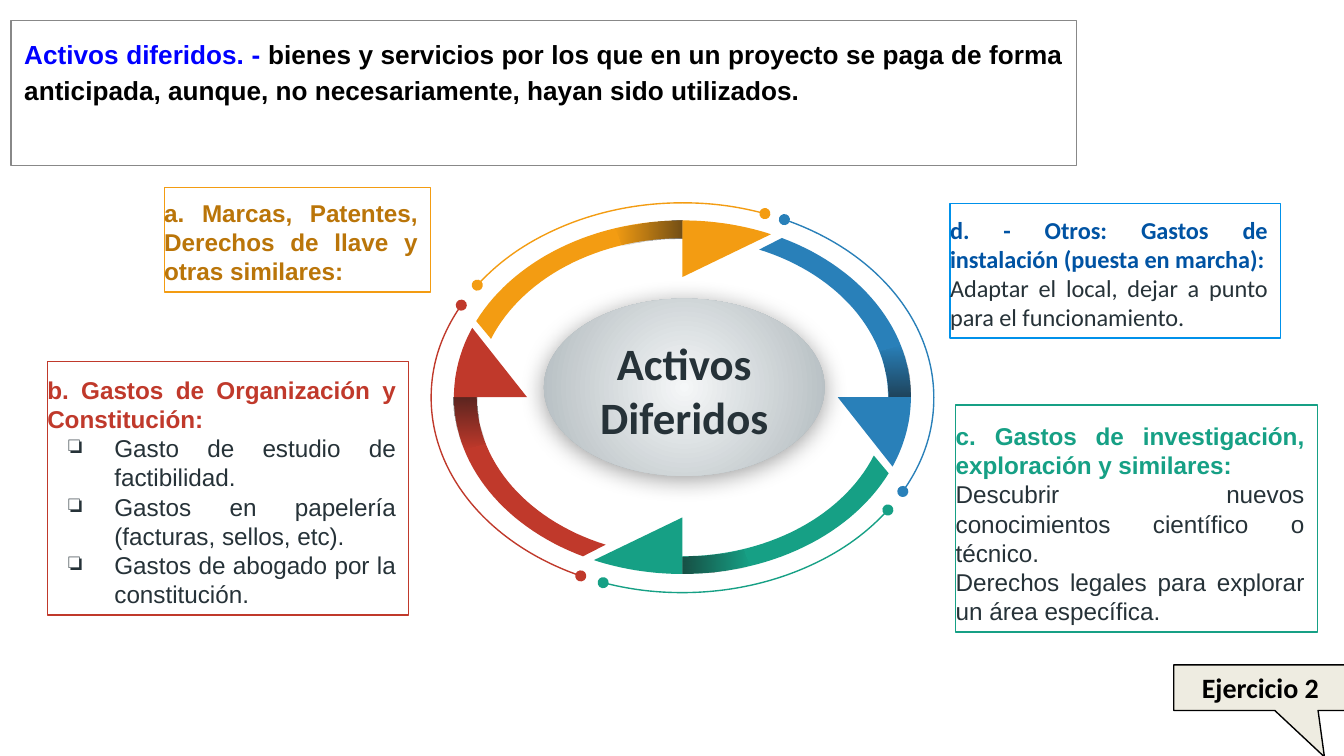
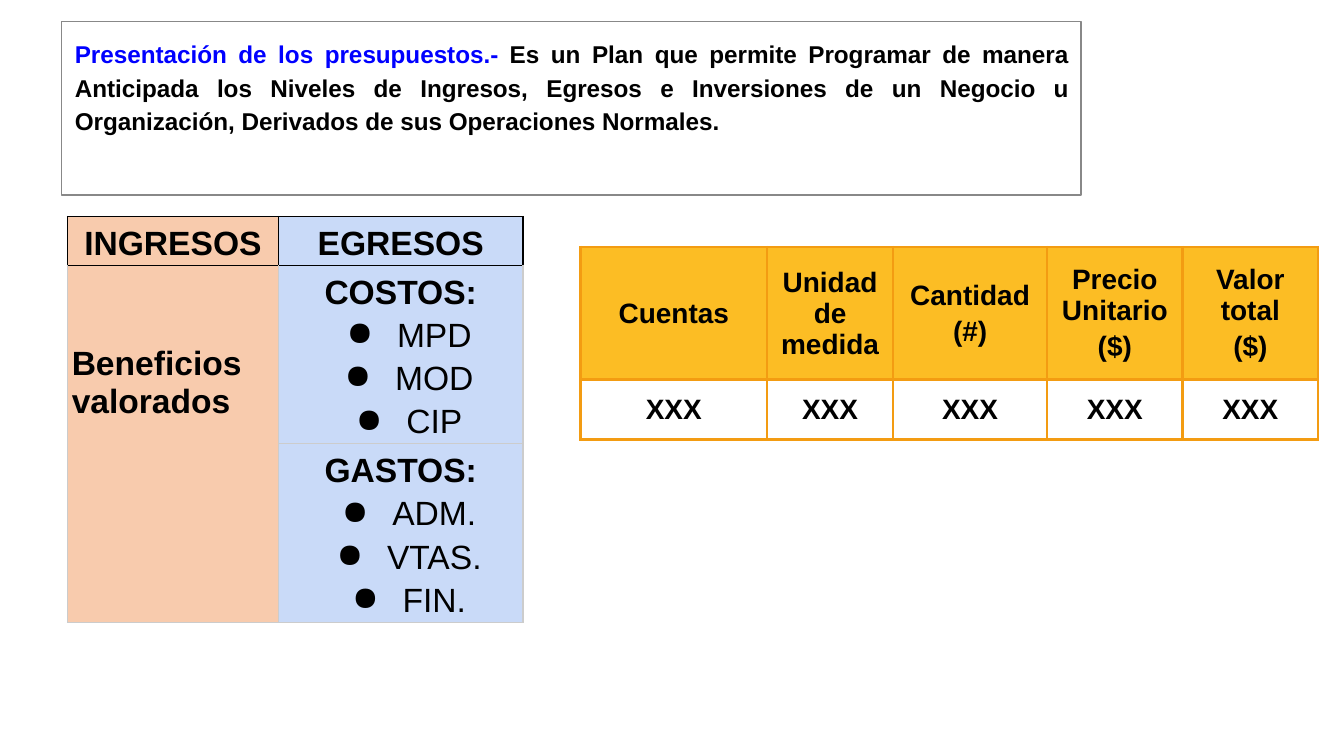
from dataclasses import dataclass
from math import cos, radians, sin
from typing import NamedTuple

from lxml.etree import SubElement
from pptx import Presentation
from pptx.dml.color import RGBColor
from pptx.enum.shapes import MSO_SHAPE
from pptx.enum.text import MSO_ANCHOR, PP_ALIGN
from pptx.oxml.ns import qn
from pptx.util import Pt

HUES = {
    "black": "000000", "white": "FFFFFF", "ink": "263238", "blue": "0000FF",
    "gray": "888888", "pale": "CCCCCC", "shade": "181818", "cream": "EEECE1",
    "gold": "F39C12", "bronze": "BA7509", "sea": "2980B9", "green": "16A085",
    "red": "C0392B", "sky": "0091EA", "navy": "0053A3", "light": "F5F7F8",
    "steel": "AFB8BC", "peach": "F8CBAD", "ice": "C9DAF8", "amber": "FCBD24",
}


class Run(NamedTuple):
    text: str
    hue: str = "black"
    size: float = 13
    bold: bool = False
    font: str = "Arial"


@dataclass
class Para:
    runs: list[Run]
    align: PP_ALIGN = PP_ALIGN.JUSTIFY
    line: float = 1.0
    after: float = 0
    mark: str = ""
    hang: float = 0


@dataclass
class Box:
    spot: tuple[float, float, float, float]
    edge: str
    paras: list[Para]
    kind: MSO_SHAPE = MSO_SHAPE.RECTANGLE
    fill: str = "white"
    pads: tuple[float, float, float, float] = (0, 3.6, 7.2, 3.6)
    hold: MSO_ANCHOR = MSO_ANCHOR.BOTTOM


@dataclass
class Cell:
    paras: list[Para]
    fill: str = ""
    edge: str = "gold"
    pads: tuple[float, float, float, float] = (7.2, 7.2, 7.2, 7.2)
    hold: MSO_ANCHOR = MSO_ANCHOR.MIDDLE


class Part(NamedTuple):
    """One quarter of the ring; angles run clockwise from the right."""
    hue: str
    outer: float
    inner: float
    stop: float
    tip: float
    arc: tuple[float, float]


# Shared helpers
def tone(name: str) -> RGBColor:
    return RGBColor.from_string(HUES[name])


def write(frame, paras: list[Para]) -> None:
    for i, item in enumerate(paras):
        para = frame.paragraphs[0] if i == 0 else frame.add_paragraph()
        para.alignment = item.align
        para.line_spacing = item.line
        para.space_before = Pt(0)
        para.space_after = Pt(item.after)
        if item.mark:
            props = para._p.get_or_add_pPr()
            props.set("marL", str(Pt(36)))
            props.set("indent", str(-Pt(item.hang)))
            tint = SubElement(props, qn("a:buClr"))
            SubElement(tint, qn("a:srgbClr"), val=HUES[item.runs[0].hue])
            SubElement(props, qn("a:buChar"), char=item.mark)
        for bit in item.runs:
            run = para.add_run()
            run.text = bit.text
            run.font.name = bit.font
            run.font.size = Pt(bit.size)
            run.font.bold = bit.bold
            run.font.color.rgb = tone(bit.hue)


def paint(shape, fill: str = "", edge: str = "") -> None:
    shape.shadow.inherit = False
    if fill:
        shape.fill.solid()
        shape.fill.fore_color.rgb = tone(fill)
    else:
        shape.fill.background()
    if edge:
        shape.line.color.rgb = tone(edge)
        shape.line.width = Pt(0.75)
    else:
        shape.line.fill.background()


def blend(shape, stops: list[tuple[str, int]], angle: float | None) -> None:
    """Gradient of (hue, opacity); a round one when there is no angle."""
    props = shape.element.spPr
    grad = props.makeelement(qn("a:gradFill"), {"rotWithShape": "1"})
    props.replace(props.find(qn("a:noFill")), grad)
    steps = SubElement(grad, qn("a:gsLst"))
    for i, (hue, alpha) in enumerate(stops):
        step = SubElement(steps, qn("a:gs"), pos=str(i * 100000))
        tint = SubElement(step, qn("a:srgbClr"), val=HUES[hue])
        SubElement(tint, qn("a:alpha"), val=str(alpha * 1000))
    if angle is None:
        way = SubElement(grad, qn("a:path"), path="circle")
        SubElement(way, qn("a:fillToRect"), {s: "50000" for s in "ltrb"})
    else:
        SubElement(grad, qn("a:lin"), ang=str(int(angle * 60000)), scaled="0")


def place(slide, box: Box):
    shape = slide.shapes.add_shape(box.kind, *map(Pt, box.spot))
    paint(shape, box.fill, box.edge)
    frame = shape.text_frame
    frame.word_wrap = True
    frame.vertical_anchor = box.hold
    (frame.margin_left, frame.margin_top,
     frame.margin_right, frame.margin_bottom) = map(Pt, box.pads)
    write(frame, box.paras)
    return shape


def head(slide, spot: tuple, size: float, term: str, text: str) -> None:
    """Framed definition at the top of each slide."""
    runs = [Run(term, "blue", size, True), Run(text, "black", size, True)]
    place(slide, Box(spot, "gray", [Para(runs, line=1.15, after=12)],
                     pads=(7.2,) * 4, hold=MSO_ANCHOR.TOP))


def grid(slide, left: float, top: float, cols: list[float],
         rows: list[float], cells: list[list[Cell]], wide: float,
         joins: tuple = ()) -> None:
    table = slide.shapes.add_table(
        len(rows), len(cols), Pt(left), Pt(top), Pt(sum(cols)), Pt(sum(rows))).table
    table.first_row = table.horz_banding = False
    for col, width in zip(table.columns, cols):
        col.width = Pt(width)
    for row, tall in zip(table.rows, rows):
        row.height = Pt(tall)
    for r, line in enumerate(cells):
        for c, item in enumerate(line):
            cell = table.cell(r, c)
            if item.fill:
                cell.fill.solid()
                cell.fill.fore_color.rgb = tone(item.fill)
            else:
                cell.fill.background()
            cell.vertical_anchor = item.hold
            (cell.margin_left, cell.margin_top,
             cell.margin_right, cell.margin_bottom) = map(Pt, item.pads)
            write(cell.text_frame, item.paras)
            props = cell._tc.get_or_add_tcPr()
            for i, side in enumerate("LRTB"):
                above = side == "T" and r > 0
                hue = cells[r - 1][c].edge if above else item.edge
                rule = props.makeelement(qn(f"a:ln{side}"), {"w": str(Pt(wide))})
                solid = SubElement(rule, qn("a:solidFill"))
                SubElement(solid, qn("a:srgbClr"), val=HUES[hue])
                props.insert(i, rule)
    for first, last in joins:
        table.cell(*first).merge(table.cell(*last))


# Ring of four arrows
MID = (365.6, 212.8)
OUTER = (122.4, 94.7)
INNER = (110.2, 85.2)
PARTS = [
    Part("gold", 205.5, 201.5, 270, 292.8, (208.75, 294.12)),
    Part("sea", 295.8, 291.9, 360, 383.1, (299.78, 23.05)),
    Part("green", 25.5, 201.5 - 180, 90, 112.8, (28.65, 113.2)),
    Part("red", 115.8, 111.9, 180, 203.1, (119.72, 202.71)),
]


def curve(radii: tuple, start: float, stop: float, count: int = 30) -> list:
    turns = [radians(start + (stop - start) * i / count) for i in range(count + 1)]
    return [(MID[0] + radii[0] * cos(t), MID[1] + radii[1] * sin(t)) for t in turns]


def trace(slide, dots: list, fill: str = ""):
    ends = [(Pt(x), Pt(y)) for x, y in dots]
    pen = slide.shapes.build_freeform(*ends[0])
    pen.add_line_segments(ends[1:], close=True)
    shape = pen.convert_to_shape()
    paint(shape, fill)
    return shape


def ring(slide) -> None:
    for part in PARTS:
        stop = part.stop
        trace(slide, curve(OUTER, part.outer, stop)
              + curve(INNER, stop, part.inner), part.hue)
        dusk = trace(slide, curve(OUTER, stop - 17, stop)
                     + curve(INNER, stop, stop - 17))
        blend(dusk, [("shade", 0), ("shade", 60)], (stop + 90) % 360)
        barb = curve((OUTER[0] * 0.68, OUTER[1] * 0.68), stop, stop, 1)[:1]
        trace(slide, curve(OUTER, stop, part.tip) + barb, part.hue)
    for part in PARTS:
        arc = slide.shapes.add_shape(
            MSO_SHAPE.ARC, Pt(231), Pt(108.7), Pt(269.3), Pt(208.8))
        paint(arc, edge=part.hue)
        for i, angle in enumerate(part.arc):
            arc.adjustments[i] = angle * 0.6
        for end in ("headEnd", "tailEnd"):
            SubElement(arc.line._get_or_add_ln(), qn(f"a:{end}"), type="oval")


# Slide 1: deferred assets
def assets(slide) -> None:
    ring(slide)

    def title(text: str, hue: str, font: str = "Arial") -> Para:
        return Para([Run(text, hue, bold=True, font=font)])

    def plain(text: str, mark: str = "", font: str = "Arial") -> Para:
        return Para([Run(text, "ink", font=font)], mark=mark, hang=24.5)

    notes = [
        Box((88, 100.3, 142.7, 56.2), "gold", [
            title("a. Marcas, Patentes, Derechos de llave y otras similares:", "bronze")]),
        Box((512, 217, 193.7, 121.6), "green", [
            title("c. Gastos de investigación, exploración y similares:", "green"),
            plain("Descubrir nuevos conocimientos científico o técnico."),
            plain("Derechos legales para explorar un área específica.")]),
        Box((25.3, 193.7, 193.7, 135.8), "red", [
            title("b. Gastos de Organización y Constitución:", "red"),
            plain("Gasto de estudio de factibilidad.", "❏"),
            plain("Gastos en papelería (facturas, sellos, etc).", "❏"),
            plain("Gastos de abogado por la constitución.", "❏")]),
        Box((509, 109.2, 177.1, 71.9), "sky", [
            title("d. - Otros: Gastos de instalación (puesta en marcha):", "navy", "Calibri"),
            plain("Adaptar el local, dejar a punto para el funcionamiento.", font="Calibri")]),
    ]
    for note in notes:
        place(slide, note)

    # Centre
    core = place(slide, Box(
        (291.4, 160, 150.4, 95), "",
        [Para([Run("Activos Diferidos", "ink", 24, True, "Calibri")], PP_ALIGN.CENTER)],
        MSO_SHAPE.OVAL, "", (7.2, 3.6, 7.2, 3.6)))
    blend(core, [("light", 100), ("steel", 100)], None)
    glow = SubElement(core.element.spPr.find(qn("a:effectLst")), qn("a:outerShdw"),
                      blurRad=str(Pt(13)), dist=str(Pt(2)), dir="5400000",
                      algn="ctr", rotWithShape="0")
    tint = SubElement(glow, qn("a:srgbClr"), val=HUES["black"])
    SubElement(tint, qn("a:alpha"), val="38000")

    head(slide, (5.9, 10.9, 570.8, 77.7), 14, "Activos diferidos. -",
         " bienes y servicios por los que en un proyecto se paga de forma "
         "anticipada, aunque, no necesariamente, hayan sido utilizados.")
    call = place(slide, Box(
        (628.8, 356.2, 92.8, 24.4), "black",
        [Para([Run("Ejercicio 2", "black", 15, True, "Calibri")], PP_ALIGN.CENTER)],
        MSO_SHAPE.RECTANGULAR_CALLOUT, "cream", (7.2,) * 4, MSO_ANCHOR.MIDDLE))
    call.adjustments[0], call.adjustments[1] = 0.37, 1.52


# Slide 2: budgets
def budgets(slide) -> None:
    head(slide, (33, 11.6, 546.2, 92.9), 13, "Presentación de los presupuestos.- ",
         "Es un Plan que permite Programar de manera Anticipada los Niveles de "
         "Ingresos, Egresos e Inversiones de un Negocio u Organización, "
         "Derivados de sus Operaciones Normales.")

    def line(text: str, size: float = 18, bold: bool = True,
             space: float = 1.15, mark: str = "") -> Para:
        return Para([Run(text, "black", size, bold)], PP_ALIGN.CENTER, space,
                    mark=mark, hang=27)

    # Income and expenses
    slim = (2.25, 1.5, 2.25, 1.5)

    def group(name: str, items: list[str]) -> Cell:
        dots = [line(item, bold=False, mark="●") for item in items]
        return Cell([line(name)] + dots, "ice", "pale", slim, MSO_ANCHOR.TOP)

    gains = Para([Run("Beneficios valorados", "black", 18, True)], PP_ALIGN.LEFT)
    grid(slide, 36.2, 116, [113, 131], [25.2, 93.6, 93.6], [
        [Cell([line("INGRESOS")], "peach", "black", slim, MSO_ANCHOR.BOTTOM),
         Cell([line("EGRESOS")], "ice", "black", slim, MSO_ANCHOR.BOTTOM)],
        [Cell([gains], "peach", "pale", (2.25, 43, 2.25, 1.5), MSO_ANCHOR.TOP),
         group("COSTOS:", ["MPD", "MOD", "CIP"])],
        [Cell([], "peach", "pale", slim),
         group("GASTOS:", ["ADM.", "VTAS.", "FIN."])],
    ], 0.75, (((1, 0), (2, 0)),))

    # Accounts
    names = [("Cuentas", ""), ("Unidad de medida", ""), ("Cantidad", "(#)"),
             ("Precio Unitario", "($)"), ("Valor total", "($)")]
    tops = [Cell([line(name, 15, space=1.0)] + ([line(unit, 15)] if unit else []), "amber")
            for name, unit in names]
    fills = [Cell([line("XXX", 15, space=1.0)]) for _ in names]
    grid(slide, 311, 132.4, [100, 67.5, 82.5, 72.6, 72.6], [71, 32.2],
         [tops, fills], 1.5)


def main() -> None:
    deck = Presentation()
    deck.slide_width, deck.slide_height = Pt(720), Pt(405)
    for draw in (assets, budgets):
        draw(deck.slides.add_slide(deck.slide_layouts[6]))
    deck.save("out.pptx")


if __name__ == "__main__":
    main()
